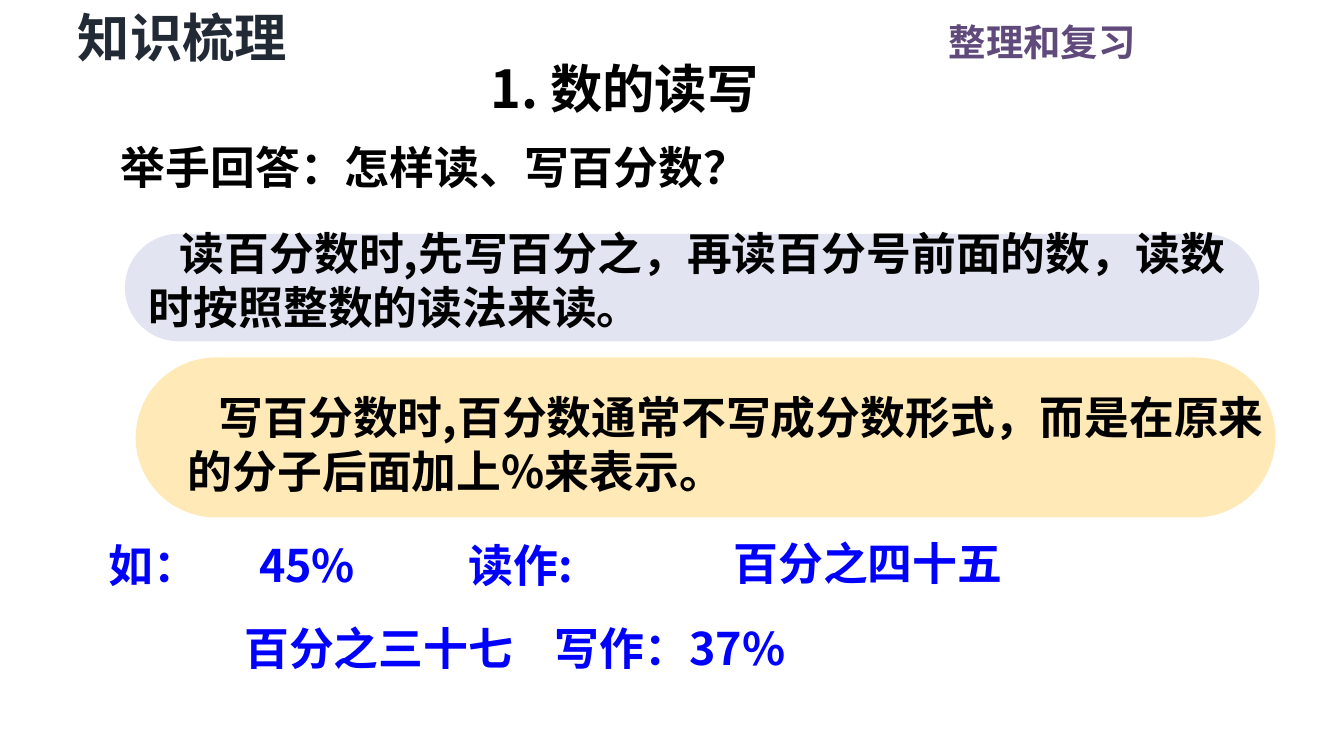
from lxml.etree import SubElement
from pptx import Presentation
from pptx.dml.color import RGBColor
from pptx.enum.shapes import MSO_SHAPE as Shape
from pptx.enum.text import PP_ALIGN as Align
from pptx.oxml.ns import qn
from pptx.util import Inches, Pt

FONT = "Noto Sans CJK SC"
COLORS = {
    "black": "000000",
    "blue": "0000FF",
    "purple": "604A7B",
    "slate": "222A35",
    "lavender": "E3E4F1",
    "cream": "FFEAB7",
}
NARROW_MARGINS = {"margin_left": 0.07, "margin_right": 0.07,
                  "margin_top": 0.04, "margin_bottom": 0.04}


def rgb(name):
    """Return the named colour."""
    return RGBColor.from_string(COLORS[name])


def add_pill(slide, box, color):
    """Add a borderless bar with fully rounded ends."""
    shape = slide.shapes.add_shape(Shape.ROUNDED_RECTANGLE, *map(Inches, box))
    shape.adjustments[0] = 0.5
    shape.shadow.inherit = False
    shape.fill.solid()
    shape.fill.fore_color.rgb = rgb(color)
    shape.line.fill.background()


def set_indent_and_tabs(paragraph, indent, tabs):
    """Set the first-line indent and left tab stops, in inches."""
    properties = paragraph._p.get_or_add_pPr()
    if indent:
        properties.set("indent", str(Inches(indent)))
    if tabs:
        tab_list = SubElement(properties, qn("a:tabLst"))
        for position in tabs:
            SubElement(tab_list, qn("a:tab"), pos=str(Inches(position)), algn="l")


def add_text(slide, box, text, color="black", size=24, margins=None,
             indent=0, tabs=(), **paragraph_format):
    """Add a wrapped box holding one bold paragraph."""
    frame = slide.shapes.add_textbox(*map(Inches, box)).text_frame
    frame.word_wrap = True
    for name, value in (margins or {}).items():
        setattr(frame, name, Inches(value))
    paragraph = frame.paragraphs[0]
    set_indent_and_tabs(paragraph, indent, tabs)
    for name, value in paragraph_format.items():
        setattr(paragraph, name, value)
    run = paragraph.add_run()
    run.text = text
    for name, value in {"name": FONT, "size": Pt(size), "bold": True}.items():
        setattr(run.font, name, value)
    run.font.color.rgb = rgb(color)
    SubElement(run._r.get_or_add_rPr(), qn("a:ea"), typeface=FONT)


def add_headings(slide):
    """Add the page headings and the question."""
    add_text(slide, (5.79, 0.09, 2.76, 0.44), "整理和复习", "purple", 20,
             alignment=Align.RIGHT)
    add_text(slide, (0.51, 0, 2.02, 0.55), "知识梳理", "slate", 28, NARROW_MARGINS)
    add_text(slide, (3.58, 0.38, 2.95, 0.55), "1. 数的读写", size=28,
             margins=NARROW_MARGINS)
    add_text(slide, (0.83, 0.92, 5.7, 0.56), "举手回答：怎样读、写百分数？",
             margins=NARROW_MARGINS, line_spacing=1.2)


def add_rules(slide):
    """Add the reading and writing rules on their bars."""
    add_pill(slide, (1.01, 2.66, 8.48, 1.19), "cream")
    add_text(slide, (1.3, 2.85, 8.23, 0.91),
             "写百分数时,百分数通常不写成分数形式，而是在原来的分子后面加上%来表示。",
             indent=0.23)
    add_pill(slide, (0.93, 1.74, 8.44, 0.8), "lavender")
    add_text(slide, (1.01, 1.63, 8.48, 0.91),
             "读百分数时,先写百分之，再读百分号前面的数，读数时按照整数的读法来读。",
             indent=0.23)


def add_examples(slide):
    """Add the worked examples."""
    add_text(slide, (0.71, 3.95, 4.77, 0.5), "如：\t45%\t读作:", "blue",
             tabs=(1.12, 2.68))
    add_text(slide, (5.36, 3.94, 4.02, 0.5), "百分之四十五", "blue")
    add_text(slide, (1.72, 4.57, 6.31, 0.5), "百分之三十七\t写作：37%", "blue",
             tabs=(2.31,))


def main():
    """Build and save the 16:9 presentation."""
    presentation = Presentation()
    presentation.slide_width = Inches(10)
    presentation.slide_height = Inches(10 * 9 / 16)
    slide = presentation.slides.add_slide(presentation.slide_layouts[6])
    add_headings(slide)
    add_rules(slide)
    add_examples(slide)
    presentation.save("out.pptx")


if __name__ == "__main__":
    main()
